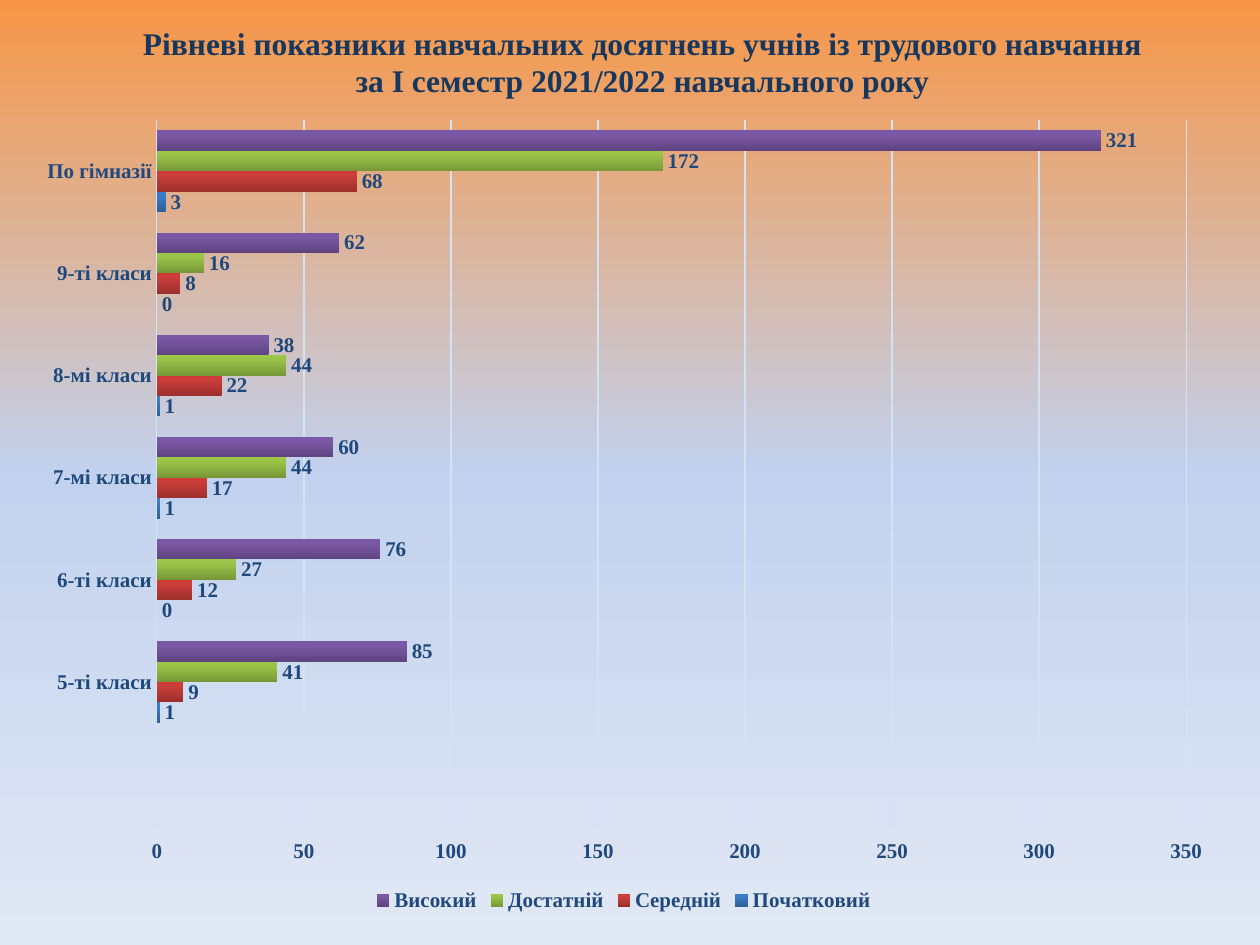
from copy import deepcopy

from lxml import etree
from pptx import Presentation
from pptx import util as u
from pptx.chart import data as chart_data
from pptx.dml.color import RGBColor
from pptx.enum import chart as ch, text
from pptx.oxml.ns import qn

COLORS = {"title": "17375E", "label": "1F497D", "grid": "D4E3F4"}
SKY = [(0, "F79646"), (0.5, "C2D1ED"), (1, "E1E8F5")]
CLASSES = ["", "5-ті класи", "6-ті класи", "7-мі класи", "8-мі класи",
           "9-ті класи", "По гімназії"]
LEVELS = [
    ("Початковий", [None, 1, 0, 1, 1, 0, 3], ("2F5F99", "3D7CC7", "3A7CCB")),
    ("Середній", [None, 9, 12, 17, 22, 8, 68], ("9C2F2D", "CB3E3A", "CE3B37")),
    ("Достатній", [None, 41, 27, 44, 44, 16, 172], ("779737", "9BC348", "9DC746")),
    ("Високий", [None, 85, 76, 60, 38, 62, 321], ("5F4480", "7B58A6", "7C57A8")),
]
PLOT_SHARES = {"x": 0.11, "y": 0.02, "w": 0.86, "h": 0.88}


class Deck:
    def __init__(self, width, height):
        self.show = Presentation()
        self.show.slide_width, self.show.slide_height = u.Inches(width), u.Inches(height)
        self.slide = self.show.slides.add_slide(self.show.slide_layouts[6])

    def area(self, left, top, width, height):
        w, h = self.show.slide_width, self.show.slide_height
        return [round(v) for v in (left * w, top * h, width * w, height * h)]

    def apply(self, target, **values):
        for name, value in values.items():
            setattr(target, name, value)

    def font(self, font, size, color):
        self.apply(font, name="Times New Roman", size=u.Pt(size), bold=True)
        font.color.rgb = RGBColor.from_string(COLORS[color])

    def line(self, line):
        line.color.rgb = RGBColor.from_string(COLORS["grid"])
        line.width = u.Pt(0.75)

    def gradient(self, fill, stops, angle):
        fill.gradient()
        fill.gradient_angle = angle
        first = fill.gradient_stops[0]._gs
        first.addnext(deepcopy(first))
        for stop, (position, color) in zip(fill.gradient_stops, stops):
            stop.position = position
            stop.color.rgb = RGBColor.from_string(color)

    def background(self, stops):
        self.gradient(self.slide.background.fill, stops, 270)

    def title(self, wording, *shares):
        frame = self.slide.shapes.add_textbox(*self.area(*shares)).text_frame
        self.apply(frame, word_wrap=True, vertical_anchor=text.MSO_ANCHOR.MIDDLE)
        frame.text = wording
        heading = frame.paragraphs[0]
        heading.alignment = text.PP_ALIGN.CENTER
        for run in heading.runs:
            self.font(run.font, 18, "title")

    def plot_layout(self, chart, shares):
        plot_area = chart.plots[0]._element.getparent()
        for old in plot_area.findall(qn("c:layout")):
            plot_area.remove(old)
        layout = etree.Element(qn("c:layout"))
        manual = etree.SubElement(layout, qn("c:manualLayout"))
        settings = {"layoutTarget": "inner", "xMode": "edge", "yMode": "edge", **shares}
        for name, value in settings.items():
            etree.SubElement(manual, qn(f"c:{name}")).set("val", str(value))
        plot_area.insert(0, layout)

    def bars(self, categories, levels, *shares):
        source = chart_data.CategoryChartData()
        source.categories = categories
        for name, values, _ in levels:
            source.add_series(name, values)
        chart = self.slide.shapes.add_chart(
            ch.XL_CHART_TYPE.BAR_CLUSTERED, *self.area(*shares), source).chart
        self.apply(chart, has_title=False, has_legend=True)
        self.font(chart.font, 12, "label")
        self.apply(chart.legend, position=ch.XL_LEGEND_POSITION.BOTTOM,
                   include_in_layout=False)
        self.font(chart.legend.font, 12, "label")
        for axis in (chart.category_axis, chart.value_axis):
            self.apply(axis, major_tick_mark=ch.XL_TICK_MARK.NONE,
                       minor_tick_mark=ch.XL_TICK_MARK.NONE)
            self.font(axis.tick_labels.font, 12, "label")
        self.line(chart.category_axis.format.line)
        self.apply(chart.value_axis, minimum_scale=0, maximum_scale=350,
                   major_unit=50, has_major_gridlines=True)
        self.line(chart.value_axis.major_gridlines.format.line)
        chart.value_axis.format.line.fill.background()
        plot = chart.plots[0]
        self.apply(plot, gap_width=100, overlap=0, vary_by_categories=False)
        for series, (_, _, shades) in zip(plot.series, levels):
            self.gradient(series.format.fill, zip((0, 0.8, 1), shades), 90)
            series.invert_if_negative = False
            labels = series.data_labels
            self.apply(labels, show_value=True,
                       position=ch.XL_LABEL_POSITION.OUTSIDE_END)
            self.font(labels.font, 12, "label")
        self.plot_layout(chart, PLOT_SHARES)


def main():
    deck = Deck(10, 7.5)
    deck.background(SKY)
    deck.title("Рівневі показники навчальних досягнень учнів із трудового навчання\v"
               "за І семестр 2021/2022 навчального року", 0.05, 0.03, 0.92, 0.07)
    deck.bars(CLASSES, LEVELS, 0.02, 0.11, 0.95, 0.86)
    deck.show.save("out.pptx")


if __name__ == "__main__":
    main()
